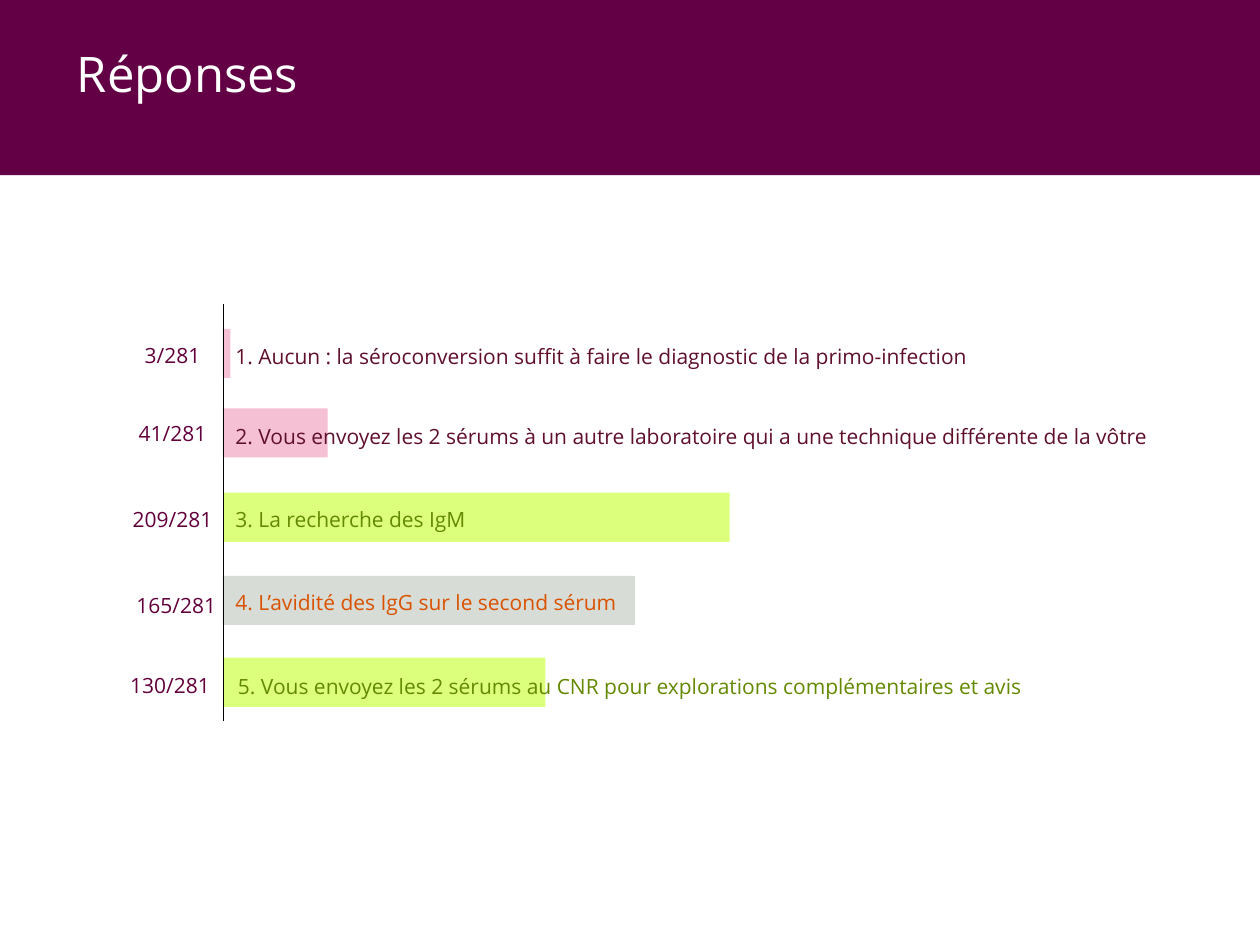
import pptx
import pptx.dml.color
import pptx.enum.shapes
import pptx.enum.text
import pptx.oxml
import pptx.oxml.ns
import pptx.util
from dataclasses import dataclass

ALIGN = pptx.enum.text.PP_ALIGN
FIT = pptx.enum.text.MSO_AUTO_SIZE

COLUMNS, ROWS = 100, 75
AXIS = 17.7
BAR_HEIGHT, TEXT_HEIGHT = 3.9, 3.2
PINK, LIME, GREY = "F5C0D4", "DCFF7C", "D7DCD7"
MAROON, GREEN, ORANGE = "600F2D", "648900", "DA5200"


def color(value):
    return pptx.dml.color.RGBColor.from_string(value)


def apply(target, values):
    for attribute, value in values.items():
        setattr(target, attribute, value)


@dataclass
class Page:
    deck: object
    slide: object
    font: str = "Open Sans"

    def place(self, *cells):
        """Turn left, top, width, height in grid cells into lengths."""
        units = (self.deck.slide_width / COLUMNS, self.deck.slide_height / ROWS)
        return [round(cell * units[i % 2]) for i, cell in enumerate(cells)]

    def format(self, paragraph, size, ink, **values):
        apply(paragraph, values)
        apply(paragraph.font, {"name": self.font, "size": pptx.util.Pt(size)})
        paragraph.font.color.rgb = color(ink)

    def title(self, text, cells, ink):
        heading = self.slide.shapes.title
        apply(heading, dict(zip(("left", "top", "width", "height"), self.place(*cells))))
        frame = heading.text_frame
        frame.text = text
        apply(frame, {"auto_size": FIT.NONE, "word_wrap": True,
                      "vertical_anchor": pptx.enum.text.MSO_ANCHOR.MIDDLE})
        self.format(frame.paragraphs[0], 28, ink, alignment=ALIGN.LEFT, line_spacing=0.9)
        return heading

    def block(self, cells, fill):
        rectangle = self.slide.shapes.add_shape(
            pptx.enum.shapes.MSO_SHAPE.RECTANGLE, *self.place(*cells))
        rectangle.shadow.inherit = False
        rectangle.fill.solid()
        rectangle.fill.fore_color.rgb = color(fill)
        rectangle.line.fill.background()
        return rectangle

    def line(self, start_end, ink):
        connector = self.slide.shapes.add_connector(
            pptx.enum.shapes.MSO_CONNECTOR.STRAIGHT, *self.place(*start_end))
        connector.line.width = pptx.util.Pt(0.5)
        connector.line.color.rgb = color(ink)
        connector._element.spPr.append(pptx.oxml.parse_xml(
            "<a:effectLst %s/>" % pptx.oxml.ns.nsdecls("a")))

    def text(self, text, cells, ink, alignment, wrap=True):
        frame = self.slide.shapes.add_textbox(*self.place(*cells)).text_frame
        frame.text = text
        apply(frame, {"word_wrap": wrap, "auto_size": FIT.SHAPE_TO_FIT_TEXT})
        self.format(frame.paragraphs[0], 12, ink, alignment=alignment,
                    line_spacing=1.15, space_after=pptx.util.Pt(12))


# Bar top and length, fill; answer left, top, width, ink; count left, top
ANSWERS = [
    ("1. Aucun\u00a0: la séroconversion suffit à faire le diagnostic de la primo-infection",
     "3/281", (26.1, 0.6, PINK), (17.7, 26.5, 73.8, MAROON), (9.5, 26.4)),
    ("2. Vous envoyez les 2 sérums à un autre laboratoire qui a une technique "
     "différente de la vôtre",
     "41/281", (32.4, 8.3, PINK), (17.7, 32.8, 78.5, MAROON), (9.5, 32.6)),
    ("3. La recherche des IgM",
     "209/281", (39.1, 40.2, LIME), (17.7, 39.4, 73.8, GREEN), (9.5, 39.4)),
    ("4. L’avidité des IgG sur le second sérum",
     "165/281", (45.7, 32.7, GREY), (17.7, 46, 73.8, ORANGE), (9.8, 46.2)),
    ("5. Vous envoyez les 2 sérums au CNR pour explorations complémentaires et avis",
     "130/281", (52.2, 25.6, LIME), (17.9, 52.7, 73.8, GREEN), (9.3, 52.6)),
]


def main():
    deck = pptx.Presentation()
    deck.slide_width, deck.slide_height = pptx.util.Inches(10), pptx.util.Inches(7.5)
    page = Page(deck, deck.slides.add_slide(deck.slide_layouts[5]))

    # Title on its band
    band = page.block((0, 0, COLUMNS, 13.9), "630045")
    heading = page.title("Réponses", (5.1, 3, 83.5, 6.1), "FFFFFF")
    heading._element.addprevious(band._element)

    # Bars, then the axis over their left edge
    for _, _, (top, length, fill), _, _ in ANSWERS:
        page.block((AXIS, top, length, BAR_HEIGHT), fill)
    page.line((AXIS, 24.1, AXIS, 57.2), "000000")

    # Answers and their counts
    for answer, count, _, (left, top, width, ink), corner in ANSWERS:
        page.text(answer, (left, top, width, TEXT_HEIGHT), ink, ALIGN.JUSTIFY)
        page.text(count, (*corner, 8.4, TEXT_HEIGHT), "63003C", ALIGN.CENTER, wrap=False)

    deck.save("out.pptx")


if __name__ == "__main__":
    main()
